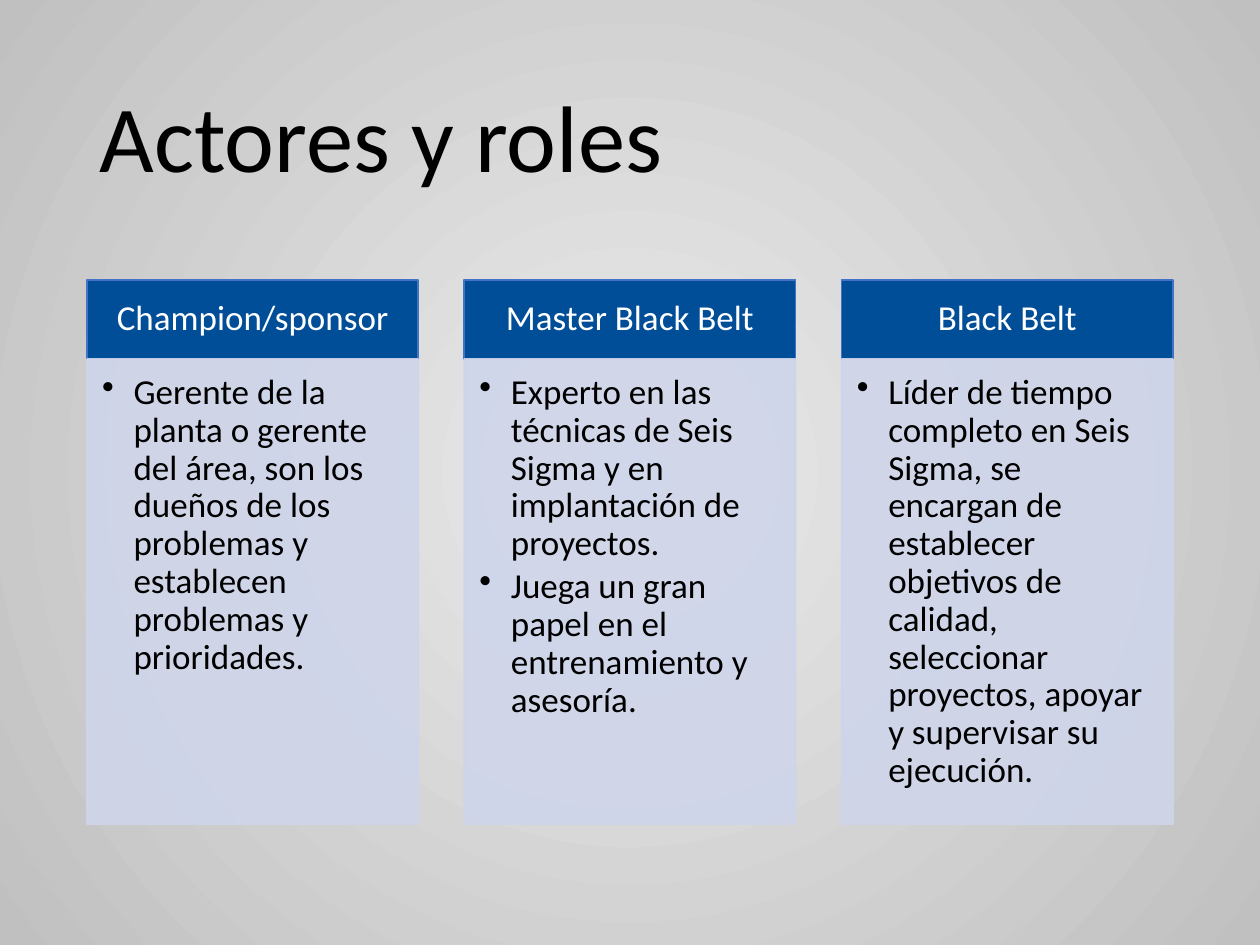
from dataclasses import dataclass

from pptx import Presentation
from pptx.dml.color import RGBColor as Rgb
from pptx.enum.shapes import MSO_SHAPE as Shape
from pptx.enum.text import MSO_ANCHOR as Anchor, PP_ALIGN as Align
from pptx.oxml.ns import qn
from pptx.oxml.xmlchemy import OxmlElement as Element
from pptx.util import Inches, Pt


@dataclass(frozen=True)
class Theme:
    font: str = "Calibri"
    title_size: int = 54
    body_size: int = 20
    ink: str = "000000"
    header_ink: str = "FFFFFF"
    header_fill: str = "004E98"
    header_line: str = "4472C4"
    panel: str = "CFD5EA"
    panel_opacity: int = 90
    glow: str = "EBEBEB"
    edge: str = "C0C0C0"


ROLES = [
    ("Champion/sponsor", [
        "Gerente de la planta o gerente del área, son los dueños de los "
        "problemas y establecen problemas y prioridades.",
    ]),
    ("Master Black Belt", [
        "Experto en las técnicas de Seis Sigma y en implantación de proyectos.",
        "Juega un gran papel en el entrenamiento y asesoría.",
    ]),
    ("Black Belt", [
        "Líder de tiempo completo en Seis Sigma, se encargan de establecer "
        "objetivos de calidad, seleccionar proyectos, apoyar y supervisar "
        "su ejecución.",
    ]),
]


class SlideBuilder:
    def __init__(self, slide, theme):
        self.slide = slide
        self.theme = theme

    def background(self):
        """Radial gradient, lightest at the centre."""
        fill = self.slide.background.fill
        fill.gradient()
        for stop, color in zip(fill.gradient_stops, (self.theme.glow, self.theme.edge)):
            stop.color.rgb = Rgb.from_string(color)
        gradient = next(self.slide.element.iter(qn("a:gradFill")))
        gradient.remove(gradient.find(qn("a:lin")))
        circle = Element("a:path")
        circle.set("path", "circle")
        center = Element("a:fillToRect")
        for side in "ltrb":
            center.set(side, "50000")
        circle.append(center)
        gradient.append(circle)

    def title(self, text, left, top, width, height):
        box = self.slide.shapes.title
        box.left, box.top, box.width, box.height = map(Inches, (left, top, width, height))
        frame = box.text_frame
        frame.text = text
        frame.word_wrap = True
        frame.vertical_anchor = Anchor.MIDDLE
        self.format(frame.paragraphs[0], self.theme.title_size, self.theme.ink, Align.LEFT)

    def format(self, para, size, color, align, space_after=0):
        para.alignment = align
        para.line_spacing = 0.9
        para.space_before = Pt(0)
        para.space_after = Pt(space_after)
        for span in para.runs:
            span.font.name = self.theme.font
            span.font.size = Pt(size)
            span.font.color.rgb = Rgb.from_string(color)

    def box(self, place, fill, line, anchor, insets):
        box = self.slide.shapes.add_shape(Shape.RECTANGLE, *map(Inches, place))
        box.shadow.inherit = False
        box.fill.solid()
        box.fill.fore_color.rgb = Rgb.from_string(fill)
        box.line.color.rgb = Rgb.from_string(line)
        box.line.width = Pt(1)
        frame = box.text_frame
        frame.word_wrap = True
        frame.vertical_anchor = anchor
        (frame.margin_left, frame.margin_top,
         frame.margin_right, frame.margin_bottom) = map(Inches, insets)
        return box

    def header(self, text, *place):
        theme = self.theme
        box = self.box(place, theme.header_fill, theme.header_line,
                       Anchor.MIDDLE, (0.16, 0.09, 0.16, 0.09))
        box.text_frame.text = text
        self.format(box.text_frame.paragraphs[0], theme.body_size,
                    theme.header_ink, Align.CENTER)

    def panel(self, items, *place):
        """Translucent box with a bulleted list."""
        theme = self.theme
        box = self.box(place, theme.panel, theme.panel,
                       Anchor.TOP, (0.12, 0.12, 0.16, 0.17))
        for color in box.element.spPr.iter(qn("a:srgbClr")):
            alpha = Element("a:alpha")
            alpha.set("val", str(theme.panel_opacity * 1000))
            color.append(alpha)
        box.text_frame.text = "\n".join(items)
        for para in box.text_frame.paragraphs:
            self.format(para, theme.body_size, theme.ink, Align.LEFT, space_after=3)
            self.bullet(para)

    def bullet(self, para):
        para.level = 1
        props = para._p.get_or_add_pPr()
        props.set("marL", str(Inches(0.25)))
        props.set("indent", str(Inches(-0.25)))
        mark = Element("a:buChar")
        mark.set("char", "•")
        props.append(mark)


def main():
    deck = Presentation()
    deck.slide_width, deck.slide_height = Inches(10), Inches(7.5)
    title_only = deck.slide_layouts[5]
    page = SlideBuilder(deck.slides.add_slide(title_only), Theme())

    page.background()
    left, content_width = 0.69, 8.62
    page.title("Actores y roles", left, 0.4, content_width, 1.45)

    # One column per role, spread evenly across the content width
    top, width, header_height, panel_height = 2.22, 2.63, 0.63, 3.69
    step = (content_width - width) / (len(ROLES) - 1)
    for index, (role, duties) in enumerate(ROLES):
        x = left + index * step
        page.header(role, x, top, width, header_height)
        page.panel(duties, x, top + header_height, width, panel_height)

    deck.save("out.pptx")


if __name__ == "__main__":
    main()
